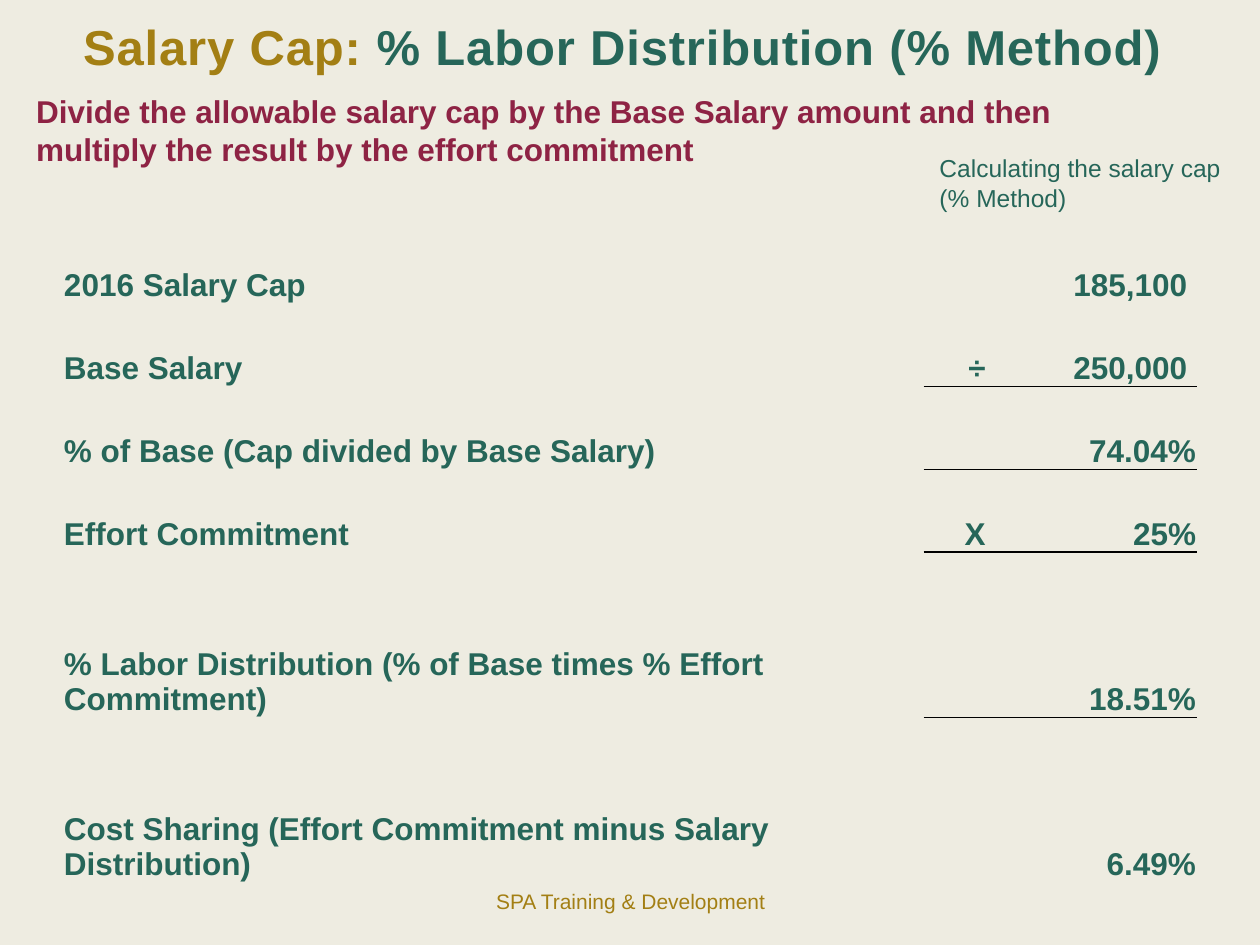
from lxml.etree import SubElement
from pptx import Presentation
from pptx.dml.color import RGBColor
from pptx.enum.text import MSO_ANCHOR as Anchor, MSO_AUTO_SIZE as AutoSize, PP_ALIGN as Align
from pptx.oxml import parse_xml
from pptx.oxml.ns import nsdecls, qn
from pptx.util import Cm, Pt

CREAM = RGBColor(0xEE, 0xEC, 0xE1)
GOLD = RGBColor(0xA3, 0x7F, 0x14)
GREEN = RGBColor(0x26, 0x66, 0x59)
MAROON = RGBColor(0x8E, 0x23, 0x44)
NO_GRID_STYLE = "{2D5ABB26-0587-4C30-8999-92F81FD0307C}"


class SlideWriter:
    font = "Arial"

    def __init__(self, slide):
        self.slide = slide

    def background(self, color):
        fill = self.slide.background.fill
        fill.solid()
        fill.fore_color.rgb = color

    def run(self, paragraph, text, size, color, bold=False, spacing=None):
        run = paragraph.add_run()
        run.text = text
        run.font.name = self.font
        run.font.size = Pt(size)
        run.font.bold = bold
        run.font.color.rgb = color
        if spacing:
            run.font._element.set("spc", str(int(spacing * 100)))

    def text(self, box, lines, size, align=Align.LEFT, bold=False, spacing=None,
             wrap=True, grow=True, anchor=Anchor.TOP):
        """Each line is a list of (text, color) runs."""
        frame = self.slide.shapes.add_textbox(*map(Cm, box)).text_frame
        frame.word_wrap = wrap
        frame.auto_size = AutoSize.SHAPE_TO_FIT_TEXT if grow else AutoSize.NONE
        frame.vertical_anchor = anchor
        paragraph = frame.paragraphs[0]
        paragraph.alignment = align
        for number, line in enumerate(lines):
            if number:
                paragraph.add_line_break()
            for text, color in line:
                self.run(paragraph, text, size, color, bold, spacing)

    def rule(self, cell, side):
        cell._tc.get_or_add_tcPr().insert(0, parse_xml(
            f'<a:{side} {nsdecls("a")} w="12700"><a:solidFill><a:srgbClr val="000000"/>'
            f'</a:solidFill></a:{side}>'))

    def table(self, left, top, widths, heights, rows, ruled_rows):
        table = self.slide.shapes.add_table(
            len(rows), len(widths), Cm(left), Cm(top),
            Cm(sum(widths)), Cm(sum(heights))).table
        table.first_row = table.horz_banding = False
        properties = table._tbl.tblPr
        style = properties.find(qn("a:tableStyleId"))
        if style is None:
            style = SubElement(properties, qn("a:tableStyleId"))
        style.text = NO_GRID_STYLE
        for column, width in zip(table.columns, widths):
            column.width = Cm(width)
        for row, height in zip(table.rows, heights):
            row.height = Cm(height)
        for r, row in enumerate(rows):
            for c, text in enumerate(row):
                cell = table.cell(r, c)
                cell.fill.background()
                cell.vertical_anchor = Anchor.BOTTOM
                cell.margin_left = cell.margin_right = cell.margin_top = Cm(0.02)
                cell.margin_bottom = 0
                paragraph = cell.text_frame.paragraphs[0]
                paragraph.alignment = Align.RIGHT if c else Align.LEFT
                if text:
                    self.run(paragraph, text, 18, GREEN, bold=True)
                # A rule closes the operator and amount columns
                if c and r in ruled_rows:
                    self.rule(cell, "lnB")
                if c and r - 1 in ruled_rows:
                    self.rule(cell, "lnT")


def main():
    deck = Presentation()
    deck.slide_width, deck.slide_height = Cm(25.4), Cm(19.05)
    writer = SlideWriter(deck.slides.add_slide(deck.slide_layouts[6]))
    writer.background(CREAM)

    # Footer
    writer.text((8.69, 17.65, 8.05, 1.02), [[("SPA Training & Development", GOLD)]], 12,
                Align.CENTER, grow=False, anchor=Anchor.MIDDLE)

    # Title and method
    writer.text((1.19, 0.2, 23.01, 1.45),
                [[("Salary Cap: ", GOLD), ("% Labor Distribution (% Method) ", GREEN)]],
                28, Align.CENTER, bold=True, spacing=0.5, wrap=False)
    writer.text((0.48, 1.73, 22.58, 1.8),
                [[("Divide the allowable salary cap by the Base Salary amount and then "
                   "multiply the result by the effort commitment", MAROON)]], 18, bold=True)
    writer.text((18.69, 2.97, 6.5, 1.45),
                [[("Calculating the salary cap", GREEN)], [("(% Method)", GREEN)]], 14)

    # Calculation: label, operator, amount
    calculation = [
        ("2016 Salary Cap", "", "185,100 "),
        ("Base Salary", "÷", "250,000 "),
        ("% of Base (Cap divided by Base Salary)", "", "74.04%"),
        ("Effort Commitment", "X", "25%"),
        ("% Labor Distribution (% of Base times % Effort Commitment)", "", "18.51%"),
        ("Cost Sharing (Effort Commitment minus Salary Distribution)", "", "6.49%"),
    ]
    operator_rows = [r for r, row in enumerate(calculation) if row[1]]
    writer.table(1.27, 4.45, [17.35, 1.27, 4.24], [1.67] * 4 + [3.33] * 2,
                 calculation, operator_rows)

    deck.save("out.pptx")


if __name__ == "__main__":
    main()
